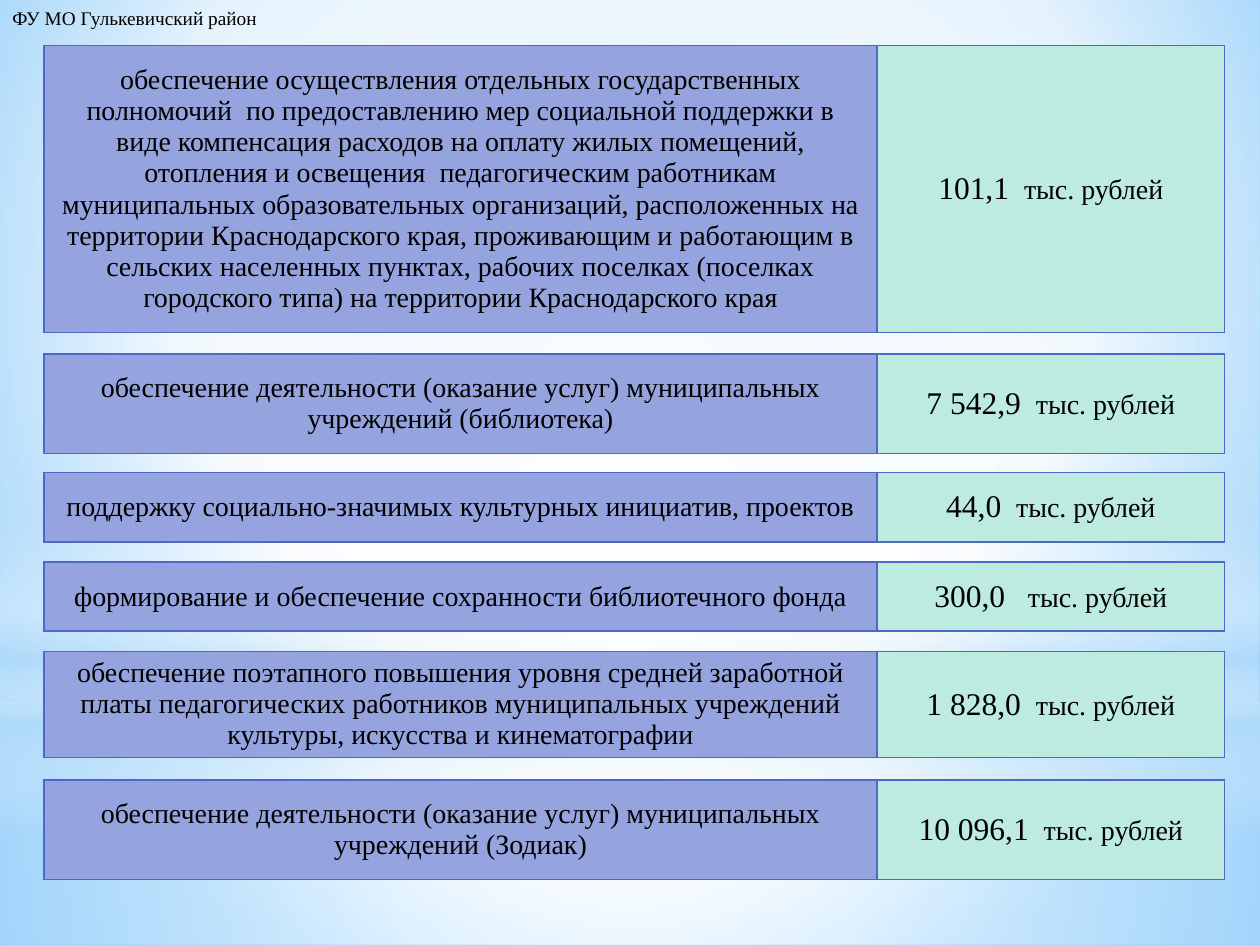
from lxml import etree
from pptx import Presentation
from pptx.dml.color import RGBColor
from pptx.enum.shapes import MSO_SHAPE
from pptx.enum.text import MSO_ANCHOR, PP_ALIGN
from pptx.oxml import parse_xml
from pptx.oxml.ns import qn
from pptx.util import Inches, Pt

RECTANGLE, OVAL = MSO_SHAPE.RECTANGLE, MSO_SHAPE.OVAL
MIDDLE, CENTER = MSO_ANCHOR.MIDDLE, PP_ALIGN.CENTER
DRAWING = 'xmlns:a="http://schemas.openxmlformats.org/drawingml/2006/main"'
FONT = "Times New Roman"
WIDTH, HEIGHT = 10, 7.5
TABLE_LEFT = 0.35
COLUMNS = (6.61, 2.76)
COLUMN_FILLS = ("95A4DE", "BEEBDF")
BORDER = "4E67C8"
MIDDLE_CIRCLE = (50, 50, 50, 50)

# Top, height, purpose, amount
EXPENSES = [
    (0.36, 2.28, "обеспечение осуществления отдельных государственных полномочий  по предоставлению мер "
     "социальной поддержки в виде компенсация расходов на оплату жилых помещений, отопления и освещения  "
     "педагогическим работникам муниципальных образовательных организаций, расположенных на территории "
     "Краснодарского края, проживающим и работающим в сельских населенных пунктах, рабочих поселках "
     "(поселках городского типа) на территории Краснодарского края", "101,1 "),
    (2.81, 0.79, "обеспечение деятельности (оказание услуг) муниципальных учреждений (библиотека)", "7 542,9 "),
    (3.75, 0.55, "поддержку социально-значимых культурных инициатив, проектов", "44,0 "),
    (4.46, 0.55, "формирование и обеспечение сохранности библиотечного фонда", "300,0  "),
    (5.17, 0.84, "обеспечение поэтапного повышения уровня средней заработной платы педагогических работников "
     "муниципальных учреждений культуры, искусства и кинематографии", "1 828,0 "),
    (6.19, 0.79, "обеспечение деятельности (оказание услуг) муниципальных учреждений (Зодиак)", "10 096,1 "),
]

# Shape, top, height, stops (position, colour, opacity), focus of a round gradient
GLOWS = [
    (RECTANGLE, 5.58, 1.92, [(0, "FFFFFF", 91), (37, "FFFFFF", 76), (100, "B4DCFA", 79)], MIDDLE_CIRCLE),
    (RECTANGLE, 0, 5.58, [(0, "FFFFFF", 89), (48, "FFFFFF", 62), (100, "B4DCFA", 79)], MIDDLE_CIRCLE),
    (RECTANGLE, 4.12, 2.5, [(0, "FFFFFF", 0), (29, "FFFFFF", 30), (45, "B4DCFA", 40),
                            (55, "FFFFFF", 26), (65, "B4DCFA", 60), (100, "FFFFFF", 0)], None),
    (OVAL, 1.75, 5.58, [(0, "FFFFFF", 100), (56, "FFFFFF", 0)], MIDDLE_CIRCLE),
]


def color(value):
    return RGBColor.from_string(value)


def set_gradient(fill, owner, stops, focus):
    """Give a fill a gradient: round if it has a focus, else from top to bottom."""
    fill.solid()
    fill.fore_color.rgb = color("FFFFFF")
    stop_xml = "".join(
        f'<a:gs pos="{position * 1000}"><a:srgbClr val="{value}">'
        f'<a:alpha val="{opacity * 1000}"/></a:srgbClr></a:gs>'
        for position, value, opacity in stops)
    if focus:
        sides = " ".join(f'{side}="{share * 1000}"' for side, share in zip("ltrb", focus))
        direction = f'<a:path path="circle"><a:fillToRect {sides}/></a:path>'
    else:
        direction = '<a:lin ang="5400000" scaled="0"/>'
    solid = owner.find(qn("a:solidFill"))
    owner.replace(solid, parse_xml(
        f'<a:gradFill {DRAWING} rotWithShape="1"><a:gsLst>{stop_xml}</a:gsLst>{direction}</a:gradFill>'))


def add_background(slide):
    fill = slide.background.fill
    fill.solid()
    set_gradient(fill, slide.element.find(".//" + qn("p:bgPr")),
                 [(0, "9ED5FF", 100), (60, "FFFFFF", 100), (100, "5BB9FF", 100)], (20, 10, 20, 60))
    for kind, top, height, stops, focus in GLOWS:
        shape = slide.shapes.add_shape(kind, 0, Inches(top), Inches(WIDTH), Inches(height))
        shape.shadow.inherit = False
        shape.line.fill.background()
        set_gradient(shape.fill, shape.element.spPr, stops, focus)


def add_run(paragraph, text, size):
    run = paragraph.add_run()
    run.text = text
    run.font.name = FONT
    run.font.size = Pt(size)
    run.font.color.rgb = color("000000")


def set_borders(cell):
    properties = cell._tc.get_or_add_tcPr()
    for index, side in enumerate(("lnL", "lnR", "lnT", "lnB")):
        line = etree.Element(qn("a:" + side), w=str(Pt(1)))
        solid = etree.SubElement(line, qn("a:solidFill"))
        etree.SubElement(solid, qn("a:srgbClr"), val=BORDER)
        properties.insert(index, line)


def add_expense(slide, top, height, purpose, amount):
    """Place a one-row table with a purpose and its amount."""
    table = slide.shapes.add_table(1, 2, Inches(TABLE_LEFT), Inches(top),
                                   Inches(sum(COLUMNS)), Inches(height)).table
    contents = ([(purpose, 16)], [(amount, 18), (" тыс. рублей", 16)])
    for index, runs in enumerate(contents):
        table.columns[index].width = Inches(COLUMNS[index])
        cell = table.cell(0, index)
        cell.fill.solid()
        cell.fill.fore_color.rgb = color(COLUMN_FILLS[index])
        cell.vertical_anchor = MIDDLE
        set_borders(cell)
        paragraph = cell.text_frame.paragraphs[0]
        paragraph.alignment = CENTER
        for text, size in runs:
            add_run(paragraph, text, size)


def add_department(slide):
    frame = slide.shapes.add_textbox(0, 0, Inches(2.18), Inches(0.29)).text_frame
    frame.word_wrap = False
    add_run(frame.paragraphs[0], "ФУ МО Гулькевичский район", 11)


def main():
    presentation = Presentation()
    presentation.slide_width, presentation.slide_height = Inches(WIDTH), Inches(HEIGHT)
    slide = presentation.slides.add_slide(presentation.slide_layouts[6])
    add_background(slide)
    for expense in EXPENSES:
        add_expense(slide, *expense)
    add_department(slide)
    presentation.save("out.pptx")


if __name__ == "__main__":
    main()
